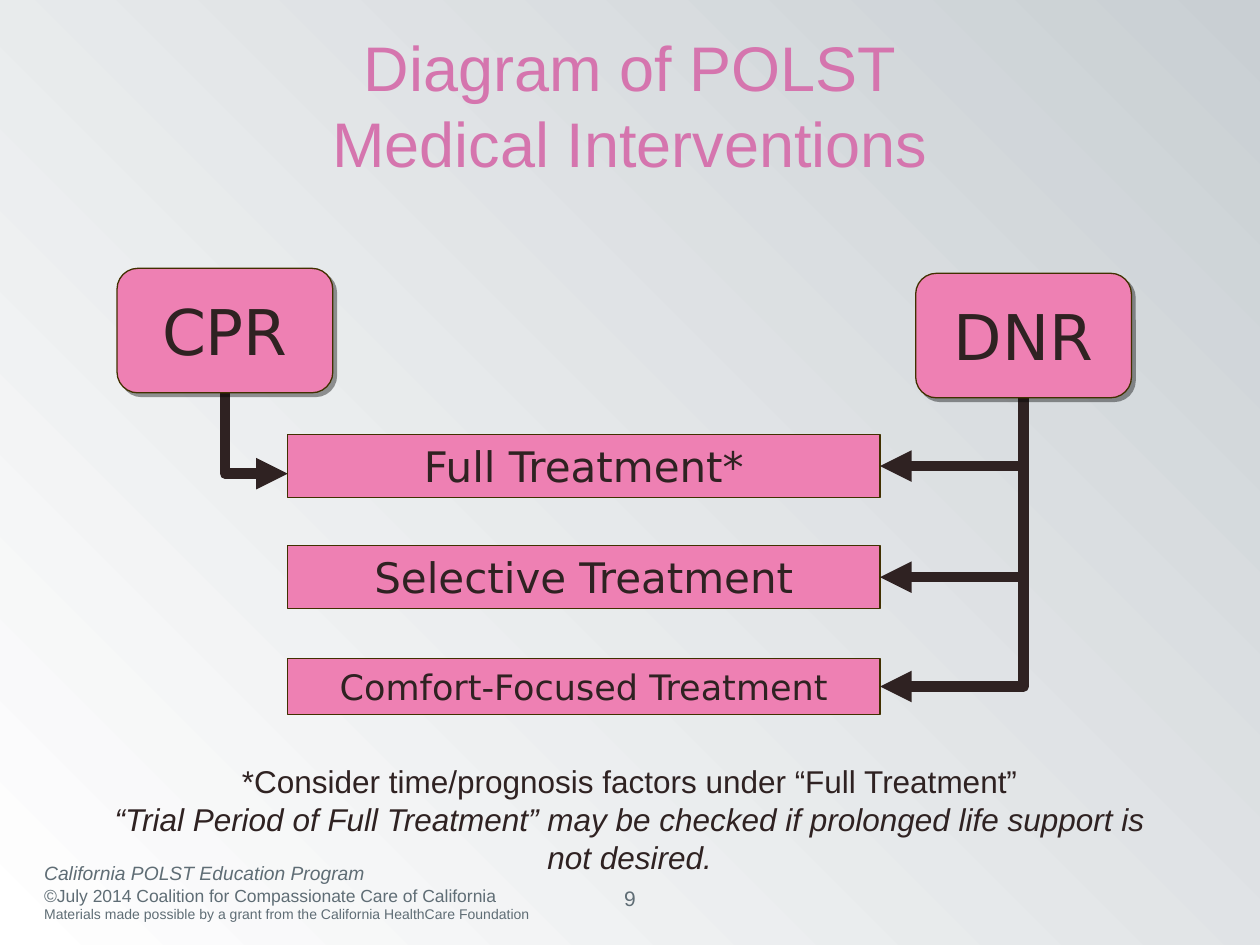
from lxml import etree
from pptx import Presentation
from pptx import util as u
from pptx.dml import color
from pptx.enum import shapes, text
from pptx.oxml import ns

COLORS = {
    "title": "D575AE",
    "box": "EE80B3",
    "border": "413000",
    "ink": "2F2222",
    "footer": "5F6D75",
    "light": "FFFFFF",
    "grey": "C9CFD3",
    "shadow": "000000",
}
BODY, LABEL = "Arial", "DejaVu Sans"


def rgb(name):
    return color.RGBColor.from_string(COLORS[name])


def add_element(parent, tag, **attributes):
    return etree.SubElement(parent, ns.qn(tag), attributes)


def style(para, size, ink, face=BODY, align=text.PP_ALIGN.CENTER, italic=False):
    para.alignment = align
    font = para.font
    font.name, font.size, font.italic = face, u.Pt(size), italic
    font.color.rgb = rgb(ink)


def write(frame, lines, anchor=text.MSO_ANCHOR.TOP, **options):
    frame.word_wrap = True
    frame.auto_size = text.MSO_AUTO_SIZE.NONE
    frame.vertical_anchor = anchor
    for index, (words, size, ink, italic) in enumerate(lines):
        para = frame.add_paragraph() if index else frame.paragraphs[0]
        para.text = words
        style(para, size, ink, italic=italic, **options)


def add_text(page, box, lines, **options):
    write(page.shapes.add_textbox(*map(u.Cm, box)).text_frame, lines, **options)


def add_box(page, kind, box, words, size):
    shape = page.shapes.add_shape(kind, *map(u.Cm, box))
    shape.shadow.inherit = False
    shape.fill.solid()
    shape.fill.fore_color.rgb = rgb("box")
    shape.line.color.rgb = rgb("border")
    shape.line.width = u.Pt(0.75)
    write(shape.text_frame, [(words, size, "ink", False)],
          anchor=text.MSO_ANCHOR.MIDDLE, face=LABEL)
    return shape


def add_choice(page, box, words):
    shape = add_box(page, shapes.MSO_SHAPE.ROUNDED_RECTANGLE, box, words, 36)
    effects = shape._element.spPr.find(ns.qn("a:effectLst"))
    shadow = add_element(effects, "a:outerShdw", dist=str(u.Pt(3)), dir="2700000",
                         algn="ctr", rotWithShape="0")
    tint = add_element(shadow, "a:srgbClr", val=COLORS["shadow"])
    add_element(tint, "a:alpha", val="40000")


def add_elbow(page, start, end):
    (x1, y1), (x2, y2) = start, end
    rightward = x2 > x1
    middle_x, middle_y = (x1 + x2) / 2, (y1 + y2) / 2
    half_drop, half_run = (y2 - y1) / 2, abs(x2 - x1) / 2
    left, right = middle_x - half_drop, middle_x + half_drop
    if rightward:
        left, right = right, left
    line = page.shapes.add_connector(
        shapes.MSO_CONNECTOR.ELBOW,
        u.Cm(left), u.Cm(middle_y - half_run), u.Cm(right), u.Cm(middle_y + half_run))
    line.line.color.rgb = rgb("ink")
    line.line.width = u.Pt(6)
    properties = line._element.spPr
    properties.find(ns.qn("a:xfrm")).set("rot", "16200000" if rightward else "5400000")
    properties.find(ns.qn("a:prstGeom")).set("prst", "bentConnector2")
    add_element(properties.find(ns.qn("a:ln")), "a:tailEnd", type="triangle")
    add_element(properties, "a:effectLst")


def add_background(page):
    fill = page.background.fill
    fill.gradient()
    fill.gradient_angle = 45
    for stop, name in zip(fill.gradient_stops, ("light", "grey")):
        stop.color.rgb = rgb(name)


def add_title(page, box, words):
    title = page.shapes.title
    title.left, title.top, title.width, title.height = map(u.Cm, box)
    write(title.text_frame, [(words, 36, "title", False)], anchor=text.MSO_ANCHOR.MIDDLE)


def add_diagram(page, box):
    left, top, width, height = box
    choice_width, choice_height = 4.35, 2.51
    cpr_x = left + choice_width / 2
    dnr_x = left + width - choice_width / 2
    dnr_top = top + 0.1
    bar_left, bar_width = left + 3.44, 11.94
    bars = [
        ("Full Treatment*", 24, 3.35, 1.27),
        ("Selective Treatment", 24, 5.59, 1.27),
        ("Comfort-Focused Treatment", 20, height - 1.12, 1.12),
    ]

    add_elbow(page, (cpr_x, top + choice_height), (bar_left, top + 4.14))
    for words, size, offset, bar_height in bars:
        bar_top = top + offset
        add_box(page, shapes.MSO_SHAPE.RECTANGLE,
                (bar_left, bar_top, bar_width, bar_height), words, size)
        add_elbow(page, (dnr_x, dnr_top + choice_height),
                  (bar_left + bar_width, bar_top + bar_height / 2))
    add_choice(page, (left, top, choice_width, choice_height), "CPR")
    add_choice(page, (left + width - choice_width, dnr_top, choice_width, choice_height), "DNR")


def add_note(page, box):
    add_text(page, box, [
        ("*Consider time/prognosis factors under “Full Treatment”", 18, "ink", False),
        ("“Trial Period of Full Treatment” may be checked if prolonged life support "
         "is not desired.", 18, "ink", True),
    ])


def add_footer(page, box):
    left, top, width, height = box
    add_text(page, (left, top, 10.36, height), [
        ("California POLST Education Program", 11, "footer", True),
        ("©July 2014 Coalition for Compassionate Care of California", 10, "footer", False),
        ("Materials made possible by a grant from the California HealthCare Foundation",
         8, "footer", False),
    ], anchor=text.MSO_ANCHOR.BOTTOM, align=text.PP_ALIGN.LEFT)
    number_width = 2.34
    add_text(page, (left + (width - number_width) / 2, top + 0.33, number_width, 0.76),
             [("9", 12, "footer", False)])


def main():
    deck = Presentation()
    deck.slide_width, deck.slide_height = u.Cm(25.4), u.Cm(19.05)
    page = deck.slides.add_slide(deck.slide_layouts[5])
    add_background(page)
    add_footer(page, (0.64, 17.4, 24.12, 1.32))
    add_title(page, (1.27, 0.48, 22.86, 3.25), "Diagram of POLST\vMedical Interventions")
    add_diagram(page, (2.36, 5.41, 20.45, 8.99))
    add_note(page, (1.57, 15.24, 22.25, 2.57))
    deck.save("out.pptx")


if __name__ == "__main__":
    main()
